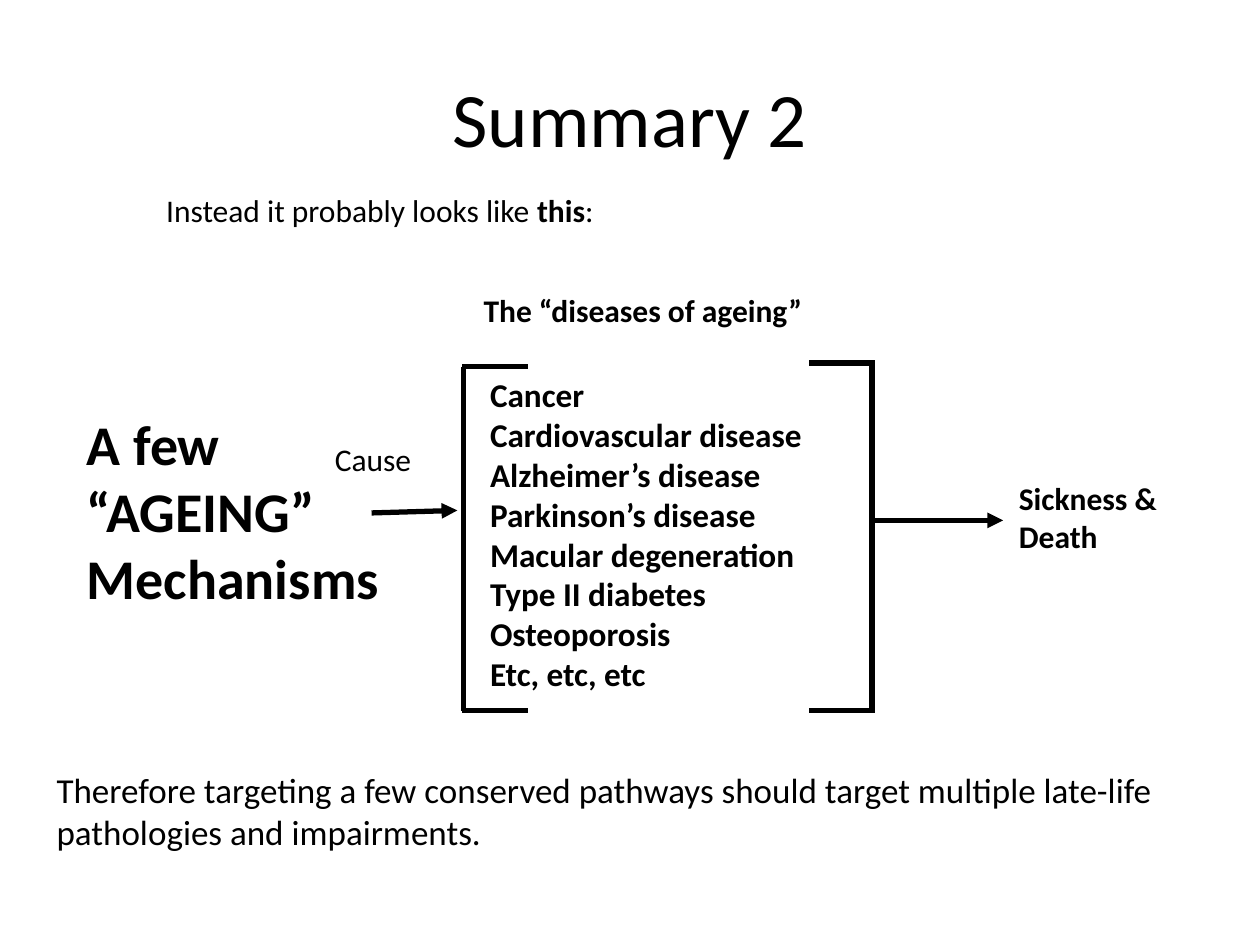
from dataclasses import dataclass

from lxml.etree import SubElement
from pptx import Presentation
from pptx.dml.color import RGBColor
from pptx.enum.shapes import MSO_CONNECTOR as Connector
from pptx.enum.text import MSO_ANCHOR as Anchor, PP_ALIGN as Align
from pptx.oxml.ns import qn
from pptx.util import Cm, Pt


@dataclass(frozen=True)
class Theme:
    font: str = "Calibri"
    ink: RGBColor = RGBColor(0, 0, 0)
    title: int = 44
    mechanisms: int = 32
    conclusion: int = 20
    diseases: int = 19
    body: int = 18
    line: int = 3


theme = Theme()

presentation = Presentation()
presentation.slide_width, presentation.slide_height = Cm(25.4), Cm(19.05)
slide = presentation.slides.add_slide(presentation.slide_layouts[6])


def add_text(box, paragraphs, size, bold=False):
    """Add a text box; each paragraph is a list of runs."""
    shape = slide.shapes.add_textbox(*(Cm(length) for length in box))
    frame = shape.text_frame
    frame.word_wrap = True
    for index, runs in enumerate(paragraphs):
        paragraph = frame.paragraphs[0] if index == 0 else frame.add_paragraph()
        for text in runs:
            run = paragraph.add_run()
            run.text = text
            run.font.name = theme.font
            run.font.size = Pt(size)
            run.font.bold = bold
            run.font.color.rgb = theme.ink
    return frame


def add_line(x1, y1, x2, y2, arrow=False):
    """Add a straight line, with an arrowhead at its end if asked."""
    line = slide.shapes.add_connector(
        Connector.STRAIGHT, Cm(x1), Cm(y1), Cm(x2), Cm(y2))
    line.line.color.rgb = theme.ink
    line.line.width = Pt(theme.line)
    if arrow:
        SubElement(line.line._get_or_add_ln(), qn("a:tailEnd"), type="triangle")
    SubElement(line._element.spPr, qn("a:effectLst"))


# Title and introduction
title = add_text((1.27, 0.76, 22.86, 3.18), [["Summary 2"]], theme.title)
title.vertical_anchor = Anchor.MIDDLE
title.paragraphs[0].alignment = Align.CENTER

intro = add_text((3.1, 3.73, 16.79, 1.02),
                 [["Instead it probably looks like ", "this", ":"]], theme.body)
intro.paragraphs[0].runs[1].font.bold = True

# Mechanisms on the left
add_text((1.5, 8.13, 7.34, 4.37),
         [["A few"], ["“AGEING”"], ["Mechanisms"]], theme.mechanisms, bold=True)
add_text((6.5, 8.74, 2.39, 1.02), [["Cause"]], theme.body)
add_line(7.49, 10.34, 9.22, 10.29, arrow=True)

# Diseases in the middle
add_text((9.5, 5.74, 8.18, 1.02), [["The “diseases of ageing”"]],
         theme.body, bold=True)
diseases = ["Cancer", "Cardiovascular disease", "Alzheimer’s disease",
            "Parkinson’s disease", "Macular degeneration", "Type II diabetes",
            "Osteoporosis", "Etc, etc, etc"]
add_text((9.63, 7.42, 10.44, 6.76), [[disease] for disease in diseases],
         theme.diseases, bold=True)

# Brackets: one upright and two ticks each
bracket_bottom, tick = 14.33, 1.32
for upright, tick_left, top in ((9.35, 9.32, 7.39), (17.58, 16.31, 7.32)):
    add_line(upright, bracket_bottom, upright, top)
    for y in (top, bracket_bottom):
        add_line(tick_left, y, tick_left + tick, y)

# Outcome on the right
add_line(17.58, 10.49, 20.22, 10.49, arrow=True)
add_text((20.29, 9.53, 4.6, 1.8), [["Sickness & Death"]], theme.body, bold=True)

# Conclusion
add_text((0.89, 15.37, 23.8, 1.96),
         [["Therefore targeting a few conserved pathways should target "
           "multiple late-life pathologies and impairments."]], theme.conclusion)

presentation.save("out.pptx")
